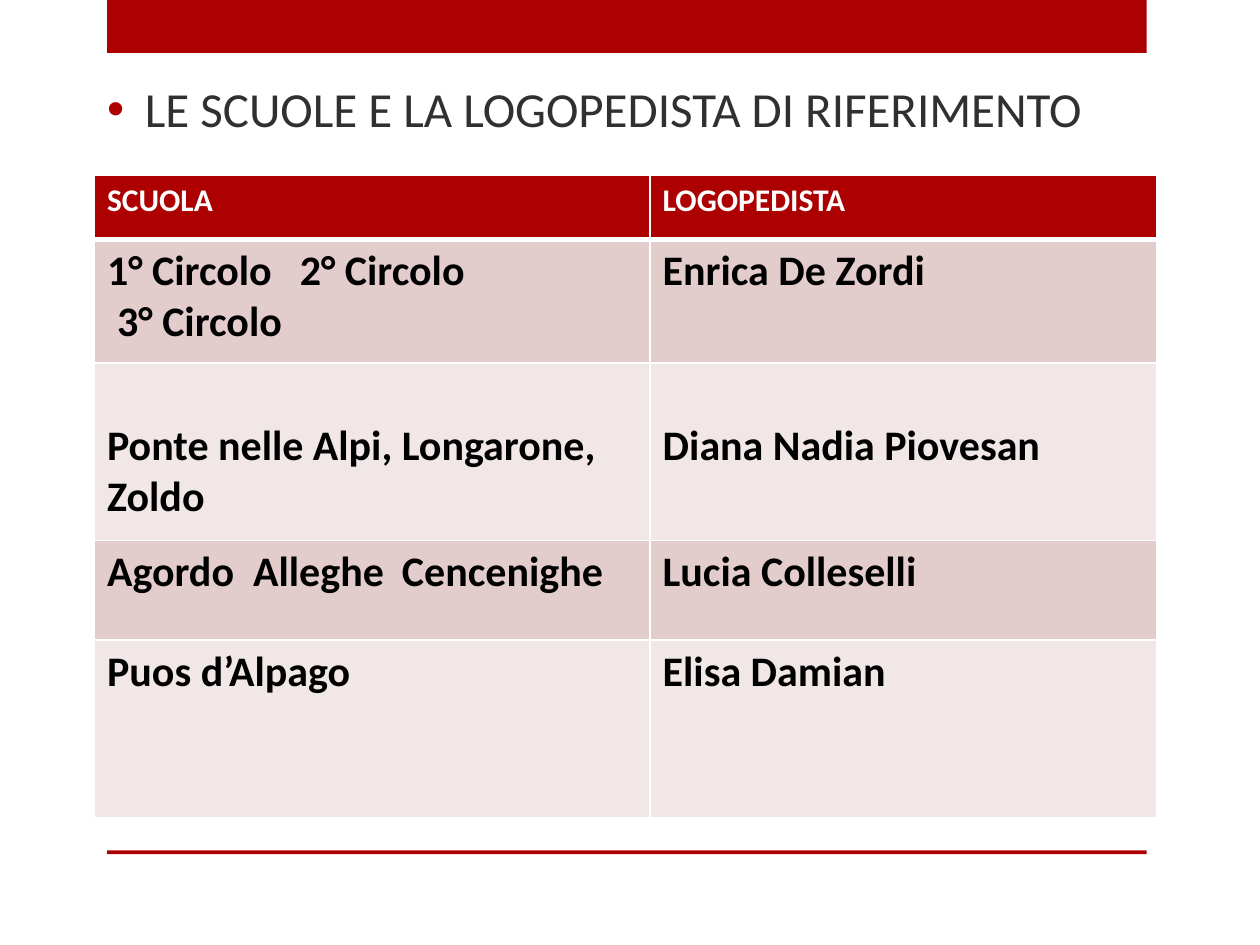
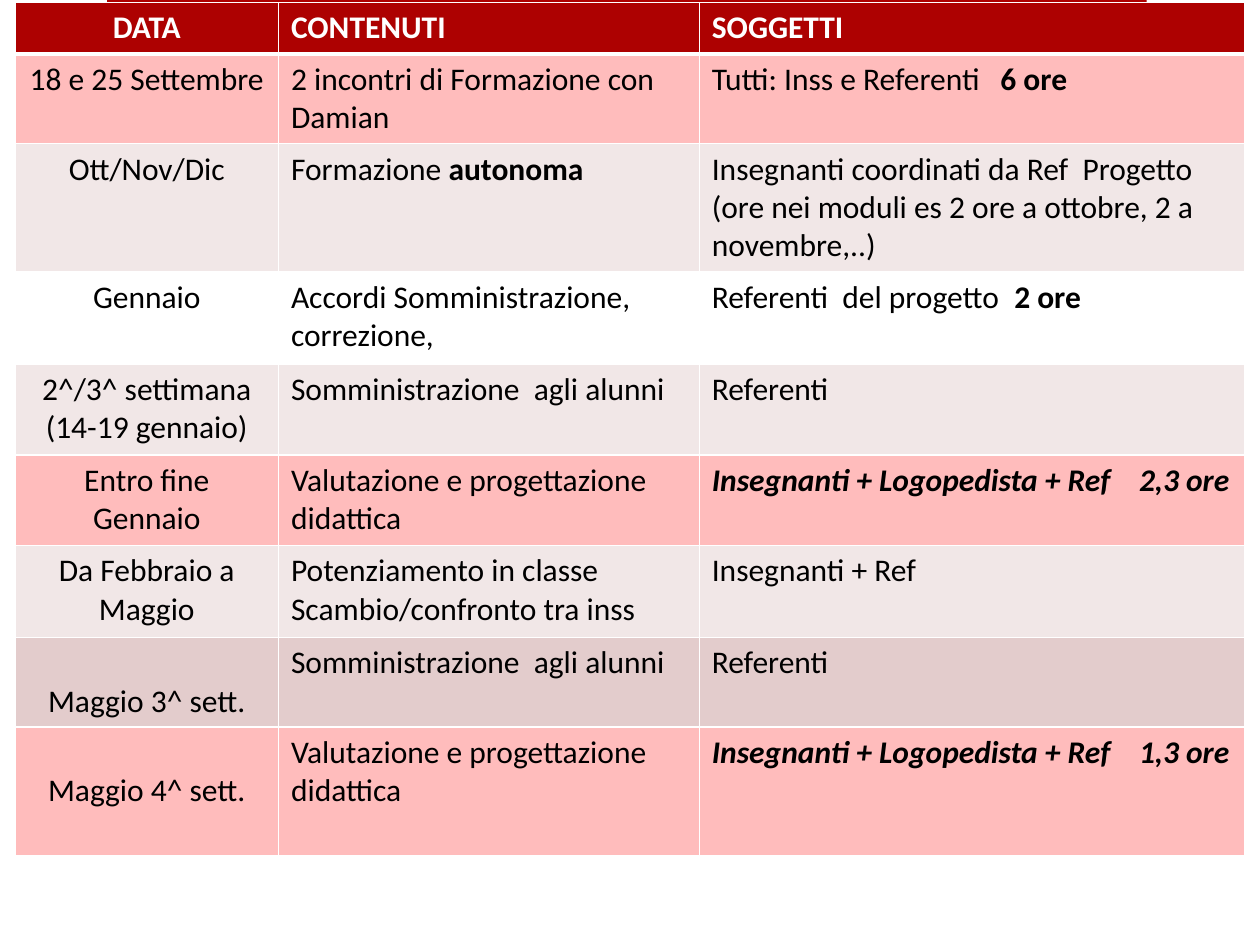
"""Build two slides on the schools, their speech therapists and the yearly plan."""
from dataclasses import dataclass

from lxml import etree
from pptx import Presentation
from pptx.dml.color import RGBColor
from pptx.enum.shapes import MSO_SHAPE
from pptx.enum.text import MSO_ANCHOR, MSO_AUTO_SIZE, PP_ALIGN
from pptx.oxml.ns import qn
from pptx.util import Emu, Inches, Pt

RECTANGLE = MSO_SHAPE.RECTANGLE
MIDDLE = MSO_ANCHOR.MIDDLE
NO_AUTOFIT = MSO_AUTO_SIZE.NONE
LEFT, CENTER = PP_ALIGN.LEFT, PP_ALIGN.CENTER

TITLE_ONLY, BLANK = 5, 6
COLUMNS, ROWS = 100, 75
WIDTH, HEIGHT = Inches(10), Inches(7.5)
FONT = "Calibri"
RED, WHITE, BLACK, GRAY = "AD0101", "FFFFFF", "000000", "303030"
ROSE, PALE, PINK = "E3CCCC", "F1E7E7", "FFBCBC"
LINE_HEIGHT = 1.22
CELL_PADDING = Inches(0.05)


@dataclass(frozen=True)
class Area:
    """A place on the grid, in columns and rows."""
    left: float
    top: float
    width: float
    height: float


@dataclass(frozen=True)
class Entry:
    """Cell text: ** switches bold, tab stops and indent are in columns."""
    text: str
    stops: tuple[float, ...] = ()
    last_indent: float = 0
    lowered: bool = False
    emphatic: bool = False


@dataclass(frozen=True)
class Row:
    """A table row with its height in grid rows and an optional fill."""
    height: float
    fill: str | None
    entries: tuple[Entry, ...]


@dataclass(frozen=True)
class Grid:
    """A table with its corner, column widths and body text format."""
    left: float
    top: float
    widths: tuple[float, ...]
    rows: tuple[Row, ...]
    body_size: int
    body_bold: bool
    first_align: PP_ALIGN


BANDS = (Area(8.5, 0, 82.5, 4.2), Area(8.5, 67.5, 82.5, 0.3))
TITLE = "LE SCUOLE E LA LOGOPEDISTA DI RIFERIMENTO"
TITLE_AREA = Area(7.5, 5.2, 82.5, 6.8)
BULLET_INDENT = 3

SCHOOLS = Grid(7.5, 13.9, (44.1, 40.2), (
    Row(5.1, RED, (Entry("SCUOLA"), Entry("LOGOPEDISTA"))),
    Row(9.8, ROSE, (Entry("1° Circolo\t2° Circolo\n3° Circolo", (15.3,), 0.8),
                    Entry("Enrica De Zordi"))),
    Row(14.1, PALE, (Entry("Ponte nelle Alpi, Longarone, Zoldo", lowered=True),
                     Entry("Diana Nadia Piovesan", lowered=True))),
    Row(7.9, ROSE, (Entry("Agordo\tAlleghe\tCencenighe", (11.6, 23.4)),
                    Entry("Lucia Colleselli"))),
    Row(14.1, PALE, (Entry("Puos d’Alpago"), Entry("Elisa Damian"))),
), 24, True, LEFT)

TESTING = Entry("Somministrazione  agli alunni")
PLANNING = Entry("Valutazione e progettazione didattica")
CONTACTS = Entry("Referenti")


def joint_meeting(hours: str) -> Entry:
    """Return the entry for a meeting of teachers and therapist."""
    return Entry(f"Insegnanti + Logopedista + Ref\t{hours} ore", (33.9,), emphatic=True)


CALENDAR = Grid(1.2, 0.2, (20.9, 33.4, 43.3), (
    Row(4.1, RED, (Entry("DATA"), Entry("CONTENUTI"), Entry("SOGGETTI"))),
    Row(7.1, PINK, (Entry("18 e 25 Settembre"),
                    Entry("2 incontri di Formazione con Damian"),
                    Entry("Tutti: Inss e Referenti\t**6 ore**", (22.9,)))),
    Row(10.2, PALE, (Entry("Ott/Nov/Dic"), Entry("Formazione **autonoma**"),
                     Entry("Insegnanti coordinati da Ref  Progetto "
                           "(ore nei moduli es 2 ore a ottobre, 2 a novembre,..)"))),
    Row(7.3, None, (Entry("Gennaio"), Entry("Accordi Somministrazione, correzione,"),
                    Entry("Referenti  del progetto\t**2 ore**", (24,)))),
    Row(7.2, PALE, (Entry("2^/3^ settimana\n(14-19 gennaio)"), TESTING, CONTACTS)),
    Row(7.2, PINK, (Entry("Entro fine Gennaio"), PLANNING, joint_meeting("2,3"))),
    Row(7.3, PALE, (Entry("Da Febbraio a Maggio"),
                    Entry("Potenziamento in classe\nScambio/confronto tra inss"),
                    Entry("Insegnanti + Ref"))),
    Row(7.1, ROSE, (Entry("Maggio 3^ sett.", lowered=True), TESTING, CONTACTS)),
    Row(10.2, PINK, (Entry("Maggio 4^ sett.", lowered=True), PLANNING,
                     joint_meeting("1,3"))),
), 18, False, CENTER)


def across(columns: float) -> Emu:
    """Convert grid columns to a length."""
    return Emu(round(WIDTH * columns / COLUMNS))


def down(rows: float) -> Emu:
    """Convert grid rows to a length."""
    return Emu(round(HEIGHT * rows / ROWS))


def place(area: Area) -> tuple[Emu, Emu, Emu, Emu]:
    """Convert an area to left, top, width and height."""
    return across(area.left), down(area.top), across(area.width), down(area.height)


def color(value: str) -> RGBColor:
    """Convert a hex string to a colour."""
    return RGBColor.from_string(value)


def apply(target, formats: dict) -> None:
    """Set each format value on the target."""
    for attribute, value in formats.items():
        setattr(target, attribute, value)


def add_node(parent, tag: str, **attributes):
    """Append an XML element with its attributes."""
    values = {name: str(value) for name, value in attributes.items()}
    return etree.SubElement(parent, qn(tag), values)


def write_run(paragraph, text: str, tint: str, size: int, bold: bool,
              italic: bool = False) -> None:
    """Add one formatted run."""
    run = paragraph.add_run()
    run.text = text
    apply(run.font, {"name": FONT, "size": Pt(size), "bold": bold, "italic": italic})
    run.font.color.rgb = color(tint)


def draw_bands(slide) -> None:
    """Draw the red band at the top and the rule at the foot."""
    for area in BANDS:
        band = slide.shapes.add_shape(RECTANGLE, *place(area))
        band.shadow.inherit = False
        band.fill.solid()
        band.fill.fore_color.rgb = color(RED)
        band.line.fill.background()


def write_title(slide) -> None:
    """Place the bulleted heading in the title placeholder."""
    heading = slide.shapes.title
    apply(heading, dict(zip(("left", "top", "width", "height"), place(TITLE_AREA))))
    apply(heading.text_frame, {"vertical_anchor": MIDDLE, "word_wrap": True,
                               "auto_size": NO_AUTOFIT})
    paragraph = heading.text_frame.paragraphs[0]
    paragraph.alignment = LEFT
    write_run(paragraph, TITLE, GRAY, 28, False)
    properties = paragraph._p.get_or_add_pPr()
    properties.set("marL", str(across(BULLET_INDENT)))
    properties.set("indent", str(-across(BULLET_INDENT)))
    add_node(add_node(properties, "a:buClr"), "a:srgbClr", val=RED)
    add_node(properties, "a:buFont", typeface="Arial")
    add_node(properties, "a:buChar", char="•")


def draw_borders(cell, row_index: int) -> None:
    """Give a cell white borders, thicker between header and body."""
    thickness = {"L": 1, "R": 1, "T": 3 if row_index == 1 else 1,
                 "B": 3 if row_index == 0 else 1}
    for side, points in thickness.items():
        edge = add_node(cell._tc.get_or_add_tcPr(), f"a:ln{side}", w=Pt(points))
        add_node(add_node(edge, "a:solidFill"), "a:srgbClr", val=WHITE)


def write_entry(cell, entry: Entry, tint: str, size: int, bold: bool,
                align: PP_ALIGN) -> None:
    """Write an entry's lines into a cell."""
    if entry.lowered:
        cell.margin_top = CELL_PADDING + Pt(size * LINE_HEIGHT)
    frame = cell.text_frame
    lines = entry.text.split("\n")
    for index, line in enumerate(lines):
        paragraph = frame.add_paragraph() if index else frame.paragraphs[0]
        paragraph.alignment = align
        properties = paragraph._p.get_or_add_pPr()
        if index and entry.last_indent:
            properties.set("marL", str(across(entry.last_indent)))
        if "\t" in line:
            stops = add_node(properties, "a:tabLst")
            for stop in entry.stops:
                add_node(stops, "a:tab", pos=across(stop), algn="l")
        for part, words in enumerate(line.split("**")):
            if words:
                write_run(paragraph, words, tint, size,
                          bold or entry.emphatic or part % 2 == 1, entry.emphatic)


def draw_grid(slide, grid: Grid) -> None:
    """Draw a table with its header, fills and borders."""
    area = Area(grid.left, grid.top, sum(grid.widths), sum(row.height for row in grid.rows))
    table = slide.shapes.add_table(len(grid.rows), len(grid.widths), *place(area)).table
    apply(table, {"first_row": False, "horz_banding": False})
    for column, width in zip(table.columns, grid.widths):
        column.width = across(width)
    for row_index, row in enumerate(grid.rows):
        table.rows[row_index].height = down(row.height)
        header = row_index == 0
        tint, size = (WHITE, 18) if header else (BLACK, grid.body_size)
        for column_index, entry in enumerate(row.entries):
            cell = table.cell(row_index, column_index)
            draw_borders(cell, row_index)
            if row.fill:
                cell.fill.solid()
                cell.fill.fore_color.rgb = color(row.fill)
            else:
                cell.fill.background()
            write_entry(cell, entry, tint, size, header or grid.body_bold,
                        LEFT if column_index else grid.first_align)


def main() -> None:
    """Build and save the presentation."""
    deck = Presentation()
    apply(deck, {"slide_width": WIDTH, "slide_height": HEIGHT})
    for layout, grid in ((TITLE_ONLY, SCHOOLS), (BLANK, CALENDAR)):
        slide = deck.slides.add_slide(deck.slide_layouts[layout])
        draw_bands(slide)
        if layout == TITLE_ONLY:
            write_title(slide)
        draw_grid(slide, grid)
    deck.save("out.pptx")


if __name__ == "__main__":
    main()
